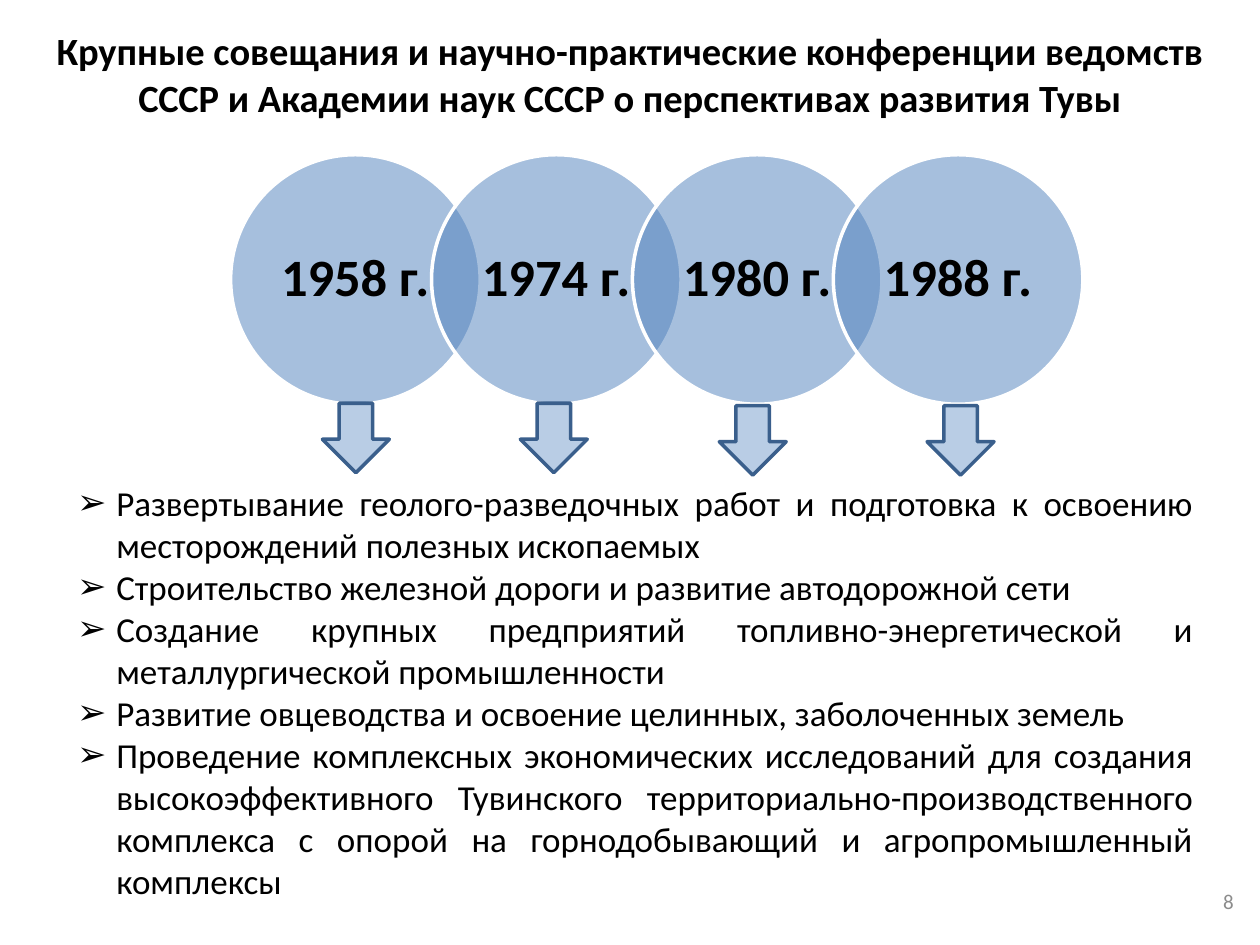
from lxml.etree import SubElement
from pptx import Presentation
from pptx.dml.color import RGBColor
from pptx.enum.shapes import MSO_SHAPE as Shape
from pptx.enum.text import MSO_ANCHOR as Anchor, MSO_AUTO_SIZE as AutoSize, PP_ALIGN as Align
from pptx.oxml.ns import qn
from pptx.util import Cm, Pt

BLACK = RGBColor(0x00, 0x00, 0x00)
WHITE = RGBColor(0xFF, 0xFF, 0xFF)
GREY = RGBColor(0x8C, 0x8C, 0x8C)
BLUE = RGBColor(0x4F, 0x81, 0xBD)
PALE_BLUE = RGBColor(0xB9, 0xCD, 0xE5)
DARK_BLUE = RGBColor(0x3A, 0x5F, 0x8C)

YEARS = ["1958 г.", "1974 г.", "1980 г.", "1988 г."]
ARROW_CORNERS = [(6.5, 8.13), (10.49, 8.13), (14.5, 8.18), (18.69, 8.18)]
DIRECTIONS = [
    "Развертывание геолого-разведочных работ и подготовка к освоению месторождений полезных ископаемых",
    "Строительство железной дороги и развитие автодорожной сети",
    "Создание крупных предприятий топливно-энергетической и металлургической промышленности",
    "Развитие овцеводства и освоение целинных, заболоченных земель",
    "Проведение комплексных экономических исследований для создания высокоэффективного "
    "Тувинского территориально-производственного комплекса с опорой на горнодобывающий "
    "и агропромышленный комплексы",
]


def format_paragraph(paragraph, size, align, color=BLACK, bold=False):
    paragraph.alignment = align
    font = paragraph.font
    font.name, font.size, font.bold = "Calibri", Pt(size), bold
    font.color.rgb = color


def paint(shape, fill, line):
    shape.shadow.inherit = False
    shape.fill.solid()
    shape.fill.fore_color.rgb = fill
    shape.line.color.rgb = line
    shape.line.width = Pt(2)


prs = Presentation()
prs.slide_width, prs.slide_height = Cm(25.4), Cm(19.05)
slide = prs.slides.add_slide(prs.slide_layouts[1])
shapes = slide.shapes

# Heading
title = shapes.title
title.left, title.top, title.width, title.height = Cm(0), Cm(0), Cm(25.4), Cm(2.97)
title.text_frame.text = ("Крупные совещания и научно-практические конференции ведомств СССР "
                         "и Академии наук СССР о перспективах развития Тувы")
title.text_frame.auto_size = AutoSize.NONE
title.text_frame.vertical_anchor = Anchor.MIDDLE
format_paragraph(title.text_frame.paragraphs[0], 22, Align.CENTER, bold=True)

# Chain of overlapping, half-transparent years
for i, year in enumerate(YEARS):
    circle = shapes.add_shape(Shape.OVAL, Cm(4.65 + 4.05 * i), Cm(3.12), Cm(5.03), Cm(5.03))
    paint(circle, BLUE, WHITE)
    color = circle.fill._xPr.find(qn("a:solidFill"))[0]
    SubElement(color, qn("a:alpha"), val="50000")
    frame = circle.text_frame
    frame.word_wrap = False
    frame.vertical_anchor = Anchor.MIDDLE
    frame.margin_left = frame.margin_right = Cm(0.28)
    frame.margin_top = frame.margin_bottom = Cm(0.1)
    frame.text = year
    frame.paragraphs[0].line_spacing = 0.9
    format_paragraph(frame.paragraphs[0], 30, Align.CENTER, bold=True)

for left, top in ARROW_CORNERS:
    arrow = shapes.add_shape(Shape.DOWN_ARROW, Cm(left), Cm(top), Cm(1.35), Cm(1.4))
    paint(arrow, PALE_BLUE, DARK_BLUE)

# Directions of development
body = slide.placeholders[1]
body.left, body.top, body.width, body.height = Cm(1.3), Cm(9.58), Cm(23.01), Cm(9.65)
body.text_frame.text = "\n".join(DIRECTIONS)
body.text_frame.auto_size = AutoSize.NONE
for paragraph in body.text_frame.paragraphs:
    format_paragraph(paragraph, 20, Align.JUSTIFY)
    paragraph.space_before = Pt(0)
    properties = paragraph._p.get_or_add_pPr()
    properties.set("marL", str(Cm(0.79)))
    properties.set("indent", str(-Cm(0.79)))
    bullet = SubElement(properties, qn("a:buChar"), char="➢")
    properties.find(qn("a:defRPr")).addprevious(bullet)

# Slide number
number = shapes.add_textbox(Cm(18.2), Cm(17.65), Cm(6.92), Cm(1.02)).text_frame
number.word_wrap = True
number.vertical_anchor = Anchor.MIDDLE
number.text = "8"
format_paragraph(number.paragraphs[0], 12, Align.RIGHT, GREY)

prs.save("out.pptx")
